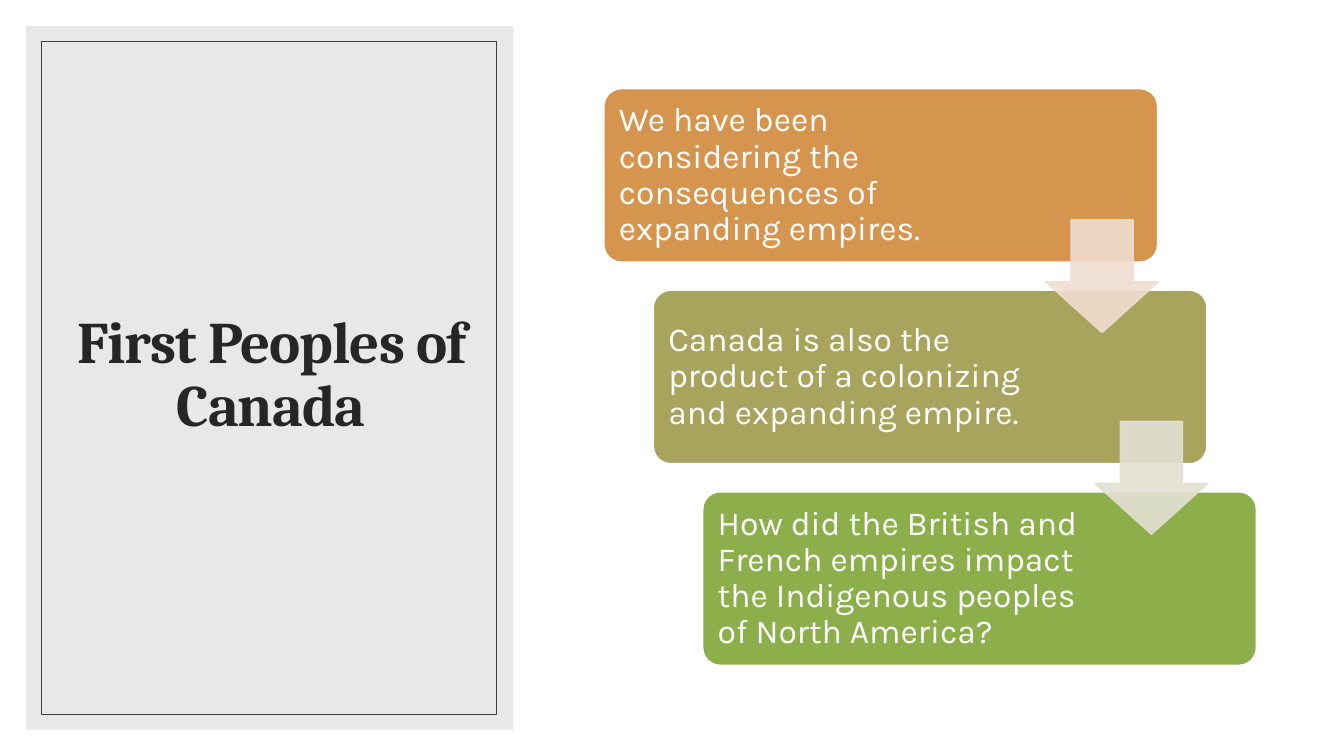
from lxml.etree import SubElement
from pptx import Presentation
from pptx.dml.color import RGBColor
from pptx.enum.shapes import MSO_SHAPE as Shape
from pptx.enum.text import MSO_ANCHOR as Anchor, MSO_AUTO_SIZE as AutoSize, PP_ALIGN as Align
from pptx.oxml.ns import qn
from pptx.util import Inches, Pt

WHITE = RGBColor(0xFF, 0xFF, 0xFF)
PANEL_GREY = RGBColor(0xD9, 0xD9, 0xD9)
FRAME_GREY = RGBColor(0x40, 0x40, 0x40)
TITLE_GREY = RGBColor(0x26, 0x26, 0x26)
ORANGE = RGBColor(0xD6, 0x95, 0x4F)
OLIVE = RGBColor(0xA9, 0xA4, 0x5D)
GREEN = RGBColor(0x8C, 0xAF, 0x4C)
PALE_ORANGE = RGBColor(0xF0, 0xDD, 0xD0)
PALE_OLIVE = RGBColor(0xE2, 0xE0, 0xD2)

# Each step: text, text width, card colour, colour of the arrow to the next card
STEPS = [
    ("We have been considering the consequences of expanding empires.",
     3.64, ORANGE, PALE_ORANGE),
    ("Canada is also the product of a colonizing and expanding empire.",
     3.79, OLIVE, PALE_OLIVE),
    ("How did the British and French empires impact the Indigenous peoples of North America?",
     3.79, GREEN, None),
]
CARD_WIDTH, CARD_HEIGHT = 5.49, 1.72
STEP_RIGHT, STEP_DOWN = 0.49, 2.0
ARROW_SIZE = 1.12


def set_opacity(color_fill, percent):
    """Make a solid fill partly transparent."""
    color = color_fill.find(qn("a:srgbClr"))
    SubElement(color, qn("a:alpha"), val=str(percent * 1000))


def add_plain_shape(slide, kind, box, fill=None, line=None, line_width=1, opacity=100):
    shape = slide.shapes.add_shape(kind, *map(Inches, box))
    shape.shadow.inherit = False
    if fill is None:
        shape.fill.background()
    else:
        shape.fill.solid()
        shape.fill.fore_color.rgb = fill
    if line is None:
        shape.line.fill.background()
    else:
        shape.line.color.rgb = line
        shape.line.width = Pt(line_width)
    if opacity < 100:
        for color_fill in shape._element.spPr.iter(qn("a:solidFill")):
            set_opacity(color_fill, opacity)
    return shape


def add_title_panel(slide, left, top, width, height):
    # Grey panel, moved behind the title
    panel = add_plain_shape(slide, Shape.RECTANGLE, (left, top, width, height),
                            fill=PANEL_GREY, opacity=60)
    title = slide.shapes.title
    title._element.addprevious(panel._element)

    # Title
    title.left, title.top = Inches(left + 0.37), Inches(top + 0.35)
    title.width, title.height = Inches(width - 0.71), Inches(height - 0.74)
    frame = title.text_frame
    frame.text = "First Peoples of Canada"
    frame.word_wrap = True
    frame.auto_size = AutoSize.NONE
    frame.vertical_anchor = Anchor.MIDDLE
    paragraph = frame.paragraphs[0]
    paragraph.alignment = Align.CENTER
    paragraph.line_spacing = 0.9
    font = paragraph.font
    font.name, font.size, font.bold = "Cambria", Pt(42), True
    font.color.rgb = TITLE_GREY
    paragraph.runs[0]._r.get_or_add_rPr().set("spc", "-70")

    # Thin frame inside the panel
    add_plain_shape(slide, Shape.RECTANGLE,
                    (left + 0.15, top + 0.15, width - 0.32, height - 0.3),
                    line=FRAME_GREY, line_width=0.5)


def add_card(slide, left, top, text, text_width, color):
    card = add_plain_shape(slide, Shape.ROUNDED_RECTANGLE,
                           (left, top, CARD_WIDTH, CARD_HEIGHT), fill=color, line=WHITE)
    card.adjustments[0] = 0.1

    text_box = slide.shapes.add_textbox(Inches(left + 0.05), Inches(top + 0.05),
                                        Inches(text_width), Inches(CARD_HEIGHT - 0.1))
    frame = text_box.text_frame
    frame.text = text
    frame.word_wrap = True
    frame.vertical_anchor = Anchor.MIDDLE
    frame.margin_left = frame.margin_right = Inches(0.1)
    frame.margin_top = frame.margin_bottom = Inches(0.1)
    paragraph = frame.paragraphs[0]
    paragraph.alignment = Align.LEFT
    paragraph.line_spacing = 0.9
    paragraph.font.name, paragraph.font.size = "Karla", Pt(24)
    paragraph.font.color.rgb = WHITE


def add_staircase(slide, left, top):
    corners = [(left + i * STEP_RIGHT, top + i * STEP_DOWN) for i in range(len(STEPS))]

    # Cards
    for (x, y), (text, text_width, color, _) in zip(corners, STEPS):
        add_card(slide, x, y, text, text_width, color)

    # Arrows on top of the cards
    for (x, y), (_, _, _, arrow_color) in zip(corners, STEPS):
        if arrow_color is not None:
            arrow = add_plain_shape(slide, Shape.DOWN_ARROW,
                                    (x + 4.38, y + 1.3, ARROW_SIZE, ARROW_SIZE),
                                    fill=arrow_color, line=arrow_color, opacity=90)
            arrow.adjustments[0] = 0.55
            arrow.adjustments[1] = 0.45


def main():
    presentation = Presentation()
    presentation.slide_width, presentation.slide_height = Inches(13.33), Inches(7.5)
    slide = presentation.slides.add_slide(presentation.slide_layouts[5])
    add_title_panel(slide, 0.26, 0.26, 4.83, 6.98)
    add_staircase(slide, 5.99, 0.88)
    presentation.save("out.pptx")


if __name__ == "__main__":
    main()
